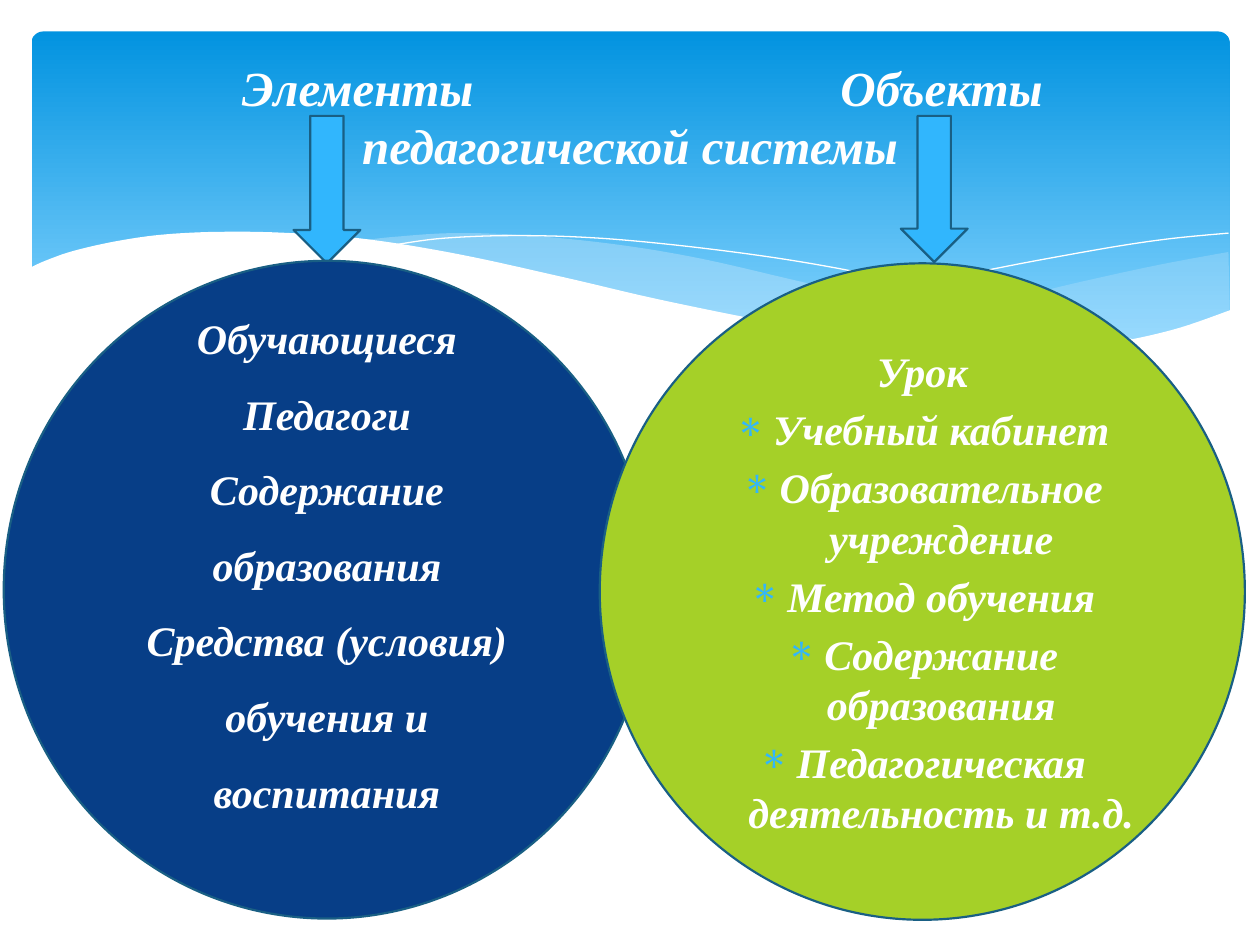
from lxml import etree
from pptx import Presentation
from pptx.dml.color import RGBColor
from pptx.enum.shapes import MSO_SHAPE
from pptx.enum.text import MSO_ANCHOR, PP_ALIGN
from pptx.oxml.ns import qn
from pptx.util import Inches, Pt

ROUND, ARROW, OVAL = MSO_SHAPE.ROUNDED_RECTANGLE, MSO_SHAPE.DOWN_ARROW, MSO_SHAPE.OVAL
LEFT, CENTER = PP_ALIGN.LEFT, PP_ALIGN.CENTER
MIDDLE = MSO_ANCHOR.MIDDLE
FONT = "Times New Roman"
COLORS = {
    "white": "FFFFFF", "sky_top": "0293E0", "sky_bottom": "83D3FE", "mist": "C6E7FC",
    "arrow": "31B6FD", "outline": "195F84", "navy": "073E87", "lime": "A5D028",
}
RGB = {name: RGBColor.from_string(value) for name, value in COLORS.items()}

prs = Presentation()
prs.slide_width, prs.slide_height = Inches(10), Inches(7.5)
CELL = prs.slide_width / 100
s = prs.slides.add_slide(prs.slide_layouts[5])


def add_wave(curves, closed):
    pts = []
    for curve in curves:
        ends = [curve[0], *curve, curve[-1]]
        for a, b, c, d in zip(ends, ends[1:], ends[2:], ends[3:]):
            for t in (i / 8 for i in range(8)):
                pts.append(tuple(
                    (2 * q + (r - o) * t + (2 * o - 5 * q + 4 * r - u) * t ** 2
                     + (3 * q - o - 3 * r + u) * t ** 3) / 2 * CELL
                    for o, q, r, u in zip(a, b, c, d)))
        pts.append(tuple(v * CELL for v in curve[-1]))
    fb = s.shapes.build_freeform(*pts[0])
    fb.add_line_segments(pts[1:], close=closed)
    sp = fb.convert_to_shape()
    sp.shadow.inherit = False
    return sp


def add_text(p, text, size):
    r = p.add_run()
    r.text = text
    r.font.name, r.font.size = FONT, Pt(size)
    r.font.bold = r.font.italic = True
    r.font.color.rgb = RGB["white"]


sky = s.shapes.add_shape(ROUND, *(int(v * CELL) for v in (2.5, 2.5, 95.1, 27)))
sky.adjustments[0] = 0.034
sky.shadow.inherit = False
sky.line.fill.background()
sky.fill.gradient()
sky.fill.gradient_angle = 270
for stop, name, position in zip(sky.fill.gradient_stops, ("sky_top", "sky_bottom"), (0, 0.9)):
    stop.color.rgb = RGB[name]
    stop.position = position

right_mist = [
    [(97.5, 20), (92.1, 21), (86.1, 22.3), (77.9, 24.2), (66.1, 26.5)],
    [(66.1, 26.5), (71.9, 27.2), (76.9, 27.7), (81.4, 27.8), (86.3, 27.5),
     (90.5, 26.9), (94.2, 25.9), (97.6, 24.7)],
]
middle_mist = [
    [(89.3, 27.3), (80.7, 26), (70.6, 24), (62.9, 22.2), (55.5, 20.5), (48.9, 19.4),
     (42, 18.7), (36.1, 18.5), (31.3, 18.8), (28.6, 19.1)],
    [(28.6, 19.1), (34.2, 19.9), (40.4, 21.1), (49.1, 23.2), (56.6, 24.8), (65, 26.4),
     (72.2, 27.4), (78.5, 27.8), (84.8, 27.7), (89.3, 27.3)],
]
snow = [
    [(97.7, 24.6), (93, 26.2), (87.5, 27.3), (80.9, 27.7), (72.6, 27.2), (62.6, 25.8),
     (52.9, 23.9), (44.7, 22), (36.5, 20.2), (29.2, 19), (23, 18.5), (17.7, 18.4),
     (13.2, 18.6), (9.5, 19.1), (5.9, 19.9), (3.6, 20.7), (2.3, 21.3)],
    [(2.3, 32.9), (97.7, 32.9)],
]
long_line = [[(30.9, 19.5), (35.3, 18.9), (41.6, 18.7), (48.9, 19), (58.2, 20),
              (66.5, 21.3), (76, 23.3), (83.1, 25.1), (90.7, 27.2)]]
short_line = [[(61.3, 25.7), (69.5, 23.5), (77.6, 21.6), (86.6, 19.9), (92.4, 19), (97.5, 18.5)]]

for curves, name, alpha in ((right_mist, "mist", 29), (middle_mist, "mist", 40),
                            (long_line, None, 0), (short_line, None, 0), (snow, "white", 100)):
    sp = add_wave(curves, name is not None)
    if name is None:
        sp.fill.background()
        sp.line.color.rgb = RGB["white"]
        sp.line.width = Pt(0)
        continue
    sp.fill.solid()
    sp.fill.fore_color.rgb = RGB[name]
    sp.line.fill.background()
    color = sp.element.spPr.find(qn("a:solidFill"))[0]
    etree.SubElement(color, qn("a:alpha"), val=str(alpha * 1000))

title = s.shapes.title
sp.element.addnext(title.element)
title.left, title.top, title.width, title.height = (int(v * CELL) for v in (5, 3.7, 90, 11))
tf = title.text_frame
tf.word_wrap = True
tf.vertical_anchor = MIDDLE
heads = tf.paragraphs[0]
heads.alignment = LEFT
tabs = etree.SubElement(heads._p.get_or_add_pPr(), qn("a:tabLst"))
for column in (13.2, 60.7):
    etree.SubElement(tabs, qn("a:tab"), pos=str(int(column * CELL)), algn="l")
add_text(heads, "\tЭлементы\tОбъекты", 28)
p = tf.add_paragraph()
p.alignment = CENTER
add_text(p, "педагогической системы", 28)
for p in tf.paragraphs:
    p.space_before = Pt(0)

elements = ["Обучающиеся", "Педагоги", "Содержание образования",
            "Средства (условия) обучения и воспитания"]
objects = ["Урок", "Учебный кабинет", "Образовательное учреждение", "Метод обучения",
           "Содержание образования", "Педагогическая деятельность и т.д."]

for kind, box, name, lines in (
    (ARROW, (23.3, 9.2, 5.3, 11.7), "arrow", []),
    (ARROW, (71.5, 9.2, 5.3, 11.6), "arrow", []),
    (OVAL, (0.3, 20.7, 51.3, 52.2), "navy", elements),
    (OVAL, (47.6, 20.9, 51.2, 52.1), "lime", objects),
):
    sp = s.shapes.add_shape(kind, *(int(v * CELL) for v in box))
    sp.shadow.inherit = False
    sp.fill.solid()
    sp.fill.fore_color.rgb = RGB[name]
    sp.line.color.rgb = RGB["outline"]
    sp.line.width = Pt(1.25)
    tf = sp.text_frame
    tf.word_wrap = True
    tf.vertical_anchor = MIDDLE
    if lines is elements:
        tf.margin_bottom = int(6.5 * CELL)
    for i, text in enumerate(lines):
        p = tf.paragraphs[0] if i == 0 else tf.add_paragraph()
        p.alignment = CENTER
        if lines is elements:
            p.line_spacing = 1.5
        else:
            p.space_before = Pt(4.3)
            if i:
                pPr = p._p.get_or_add_pPr()
                pPr.set("marL", str(int(3 * CELL)))
                pPr.set("indent", str(int(-3 * CELL)))
                bullet_color = etree.SubElement(pPr, qn("a:buClr"))
                etree.SubElement(bullet_color, qn("a:srgbClr"), val=COLORS["arrow"])
                etree.SubElement(pPr, qn("a:buChar"), char="∗")
        add_text(p, text, 24)

prs.save("out.pptx")
